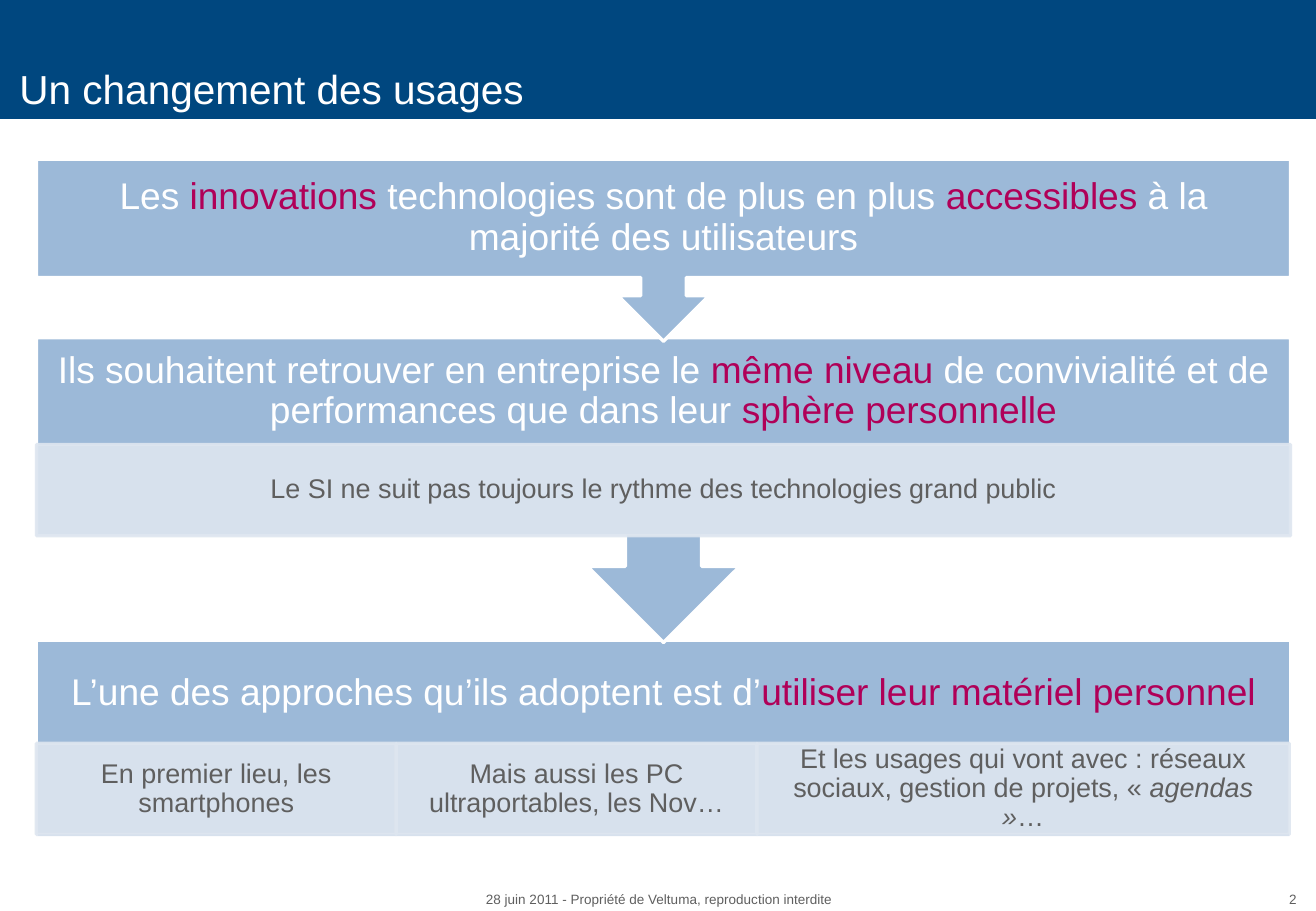
import pptx
import pptx.util
import pptx.dml.color
import pptx.enum.shapes
import pptx.enum.text
import pptx.oxml.ns
import lxml.etree

Inches = pptx.util.Inches
Pt = pptx.util.Pt
RGBColor = pptx.dml.color.RGBColor
MSO_SHAPE = pptx.enum.shapes.MSO_SHAPE
ANCHOR = pptx.enum.text.MSO_ANCHOR
ALIGN = pptx.enum.text.PP_ALIGN

NAVY = RGBColor(0x00, 0x47, 0x7F)
BLUE = RGBColor(0x9C, 0xB9, 0xD8)
PALE = RGBColor(0xDE, 0xE6, 0xF0)
WHITE = RGBColor(0xFF, 0xFF, 0xFF)
GREY = RGBColor(0x5F, 0x5F, 0x5F)
MAGENTA = RGBColor(0xB0, 0x00, 0x58)

LEFT, WIDTH = 0.3, 10.32
DETAIL_HEIGHT = 0.75


def add_block(kind, left, top, width, height, fill, line):
    block = slide.shapes.add_shape(
        kind, Inches(left), Inches(top), Inches(width), Inches(height))
    block.shadow.inherit = False
    block.fill.solid()
    block.fill.fore_color.rgb = fill
    if line is None:
        block.line.fill.background()
    else:
        block.line.color.rgb = line
        block.line.width = Pt(2)
    return block


def write(holder, runs, size, align, anchor, insets, spacing=1.0):
    frame = holder.text_frame
    frame.word_wrap = True
    frame.auto_size = pptx.enum.text.MSO_AUTO_SIZE.NONE
    frame.vertical_anchor = anchor
    frame.margin_left, frame.margin_top, frame.margin_right, frame.margin_bottom = [
        Inches(inset) for inset in insets]
    paragraph = frame.paragraphs[0]
    paragraph.alignment = align
    paragraph.line_spacing = spacing
    for text, color, italic in runs:
        run = paragraph.add_run()
        run.text = text
        run.font.name = "Arial"
        run.font.size = Pt(size)
        run.font.italic = italic
        run.font.color.rgb = color


deck = pptx.Presentation()
deck.slide_width = Inches(10.83)
deck.slide_height = Inches(7.5)
slide = deck.slides.add_slide(deck.slide_layouts[5])

banner = add_block(MSO_SHAPE.RECTANGLE, -0.01, -0.03, 10.85, 1.01, NAVY, None)
title = slide.shapes.title
title._element.addprevious(banner._element)
title.left, title.top = Inches(0), Inches(-0.03)
title.width, title.height = Inches(10.85), Inches(1.01)
write(title, [("Un changement des usages", WHITE, False)], 24,
      ALIGN.LEFT, ANCHOR.BOTTOM, (0.16, 0.08, 0.1, 0.05))

footers = [
    ("2", 10.14, 0.63, ALIGN.RIGHT),
    ("28 juin 2011 - Propriété de Veltuma, reproduction interdite", 0, 10.85, ALIGN.CENTER),
]
for text, left, width, align in footers:
    footer = slide.shapes.add_textbox(
        Inches(left), Inches(7.29), Inches(width), Inches(0.21))
    write(footer, [(text, GREY, False)], 8, align, ANCHOR.TOP, (0.1, 0.05, 0.1, 0.05))

steps = [
    (MSO_SHAPE.RECTANGLE, 5.27, 1.63, 0.88,
     [("L’une des approches qu’ils adoptent est d’", WHITE, False),
      ("utiliser leur matériel personnel", MAGENTA, False)],
     6.12,
     [(2.96, [("En premier lieu, les smartphones", GREY, False)]),
      (2.97, [("Mais aussi les PC ultraportables, les Nov…", GREY, False)]),
      (4.38, [("Et les usages qui vont avec : réseaux sociaux, gestion de projets, « ", GREY, False),
              ("agendas »", GREY, True),
              ("…", GREY, False)])]),
    (MSO_SHAPE.UP_ARROW_CALLOUT, 2.78, 2.51, 0.88,
     [("Ils souhaitent retrouver en entreprise le ", WHITE, False),
      ("même niveau ", MAGENTA, False),
      ("de convivialité et de performances que dans leur ", WHITE, False),
      ("sphère personnelle", MAGENTA, False)],
     3.66,
     [(WIDTH, [("Le SI ne suit pas toujours le rythme des technologies grand public", GREY, False)])]),
    (MSO_SHAPE.UP_ARROW_CALLOUT, 1.31, 1.5, 0.97,
     [("Les ", WHITE, False),
      ("innovations", MAGENTA, False),
      (" technologies sont de plus en plus ", WHITE, False),
      ("accessibles", MAGENTA, False),
      (" à la majorité des utilisateurs", WHITE, False)],
     None, []),
]

for kind, top, height, heading_height, heading_runs, detail_top, details in steps:
    step = add_block(kind, LEFT, top, WIDTH, height, BLUE, WHITE)
    if kind == MSO_SHAPE.UP_ARROW_CALLOUT:
        step.rotation = 180
    heading = slide.shapes.add_textbox(
        Inches(LEFT), Inches(top), Inches(WIDTH), Inches(heading_height))
    write(heading, heading_runs, 22, ALIGN.CENTER, ANCHOR.MIDDLE, (0.17,) * 4, 0.9)

    detail_left = LEFT
    for detail_width, detail_runs in details:
        detail = add_block(MSO_SHAPE.RECTANGLE, detail_left, detail_top,
                           detail_width, DETAIL_HEIGHT, PALE, PALE)
        for color in detail._element.spPr.iter(pptx.oxml.ns.qn("a:srgbClr")):
            lxml.etree.SubElement(color, pptx.oxml.ns.qn("a:alpha"), val="90000")
        write(detail, detail_runs, 16, ALIGN.CENTER, ANCHOR.MIDDLE,
              (0.12, 0.02, 0.12, 0.02), 0.9)
        detail_left += detail_width

deck.save("out.pptx")
